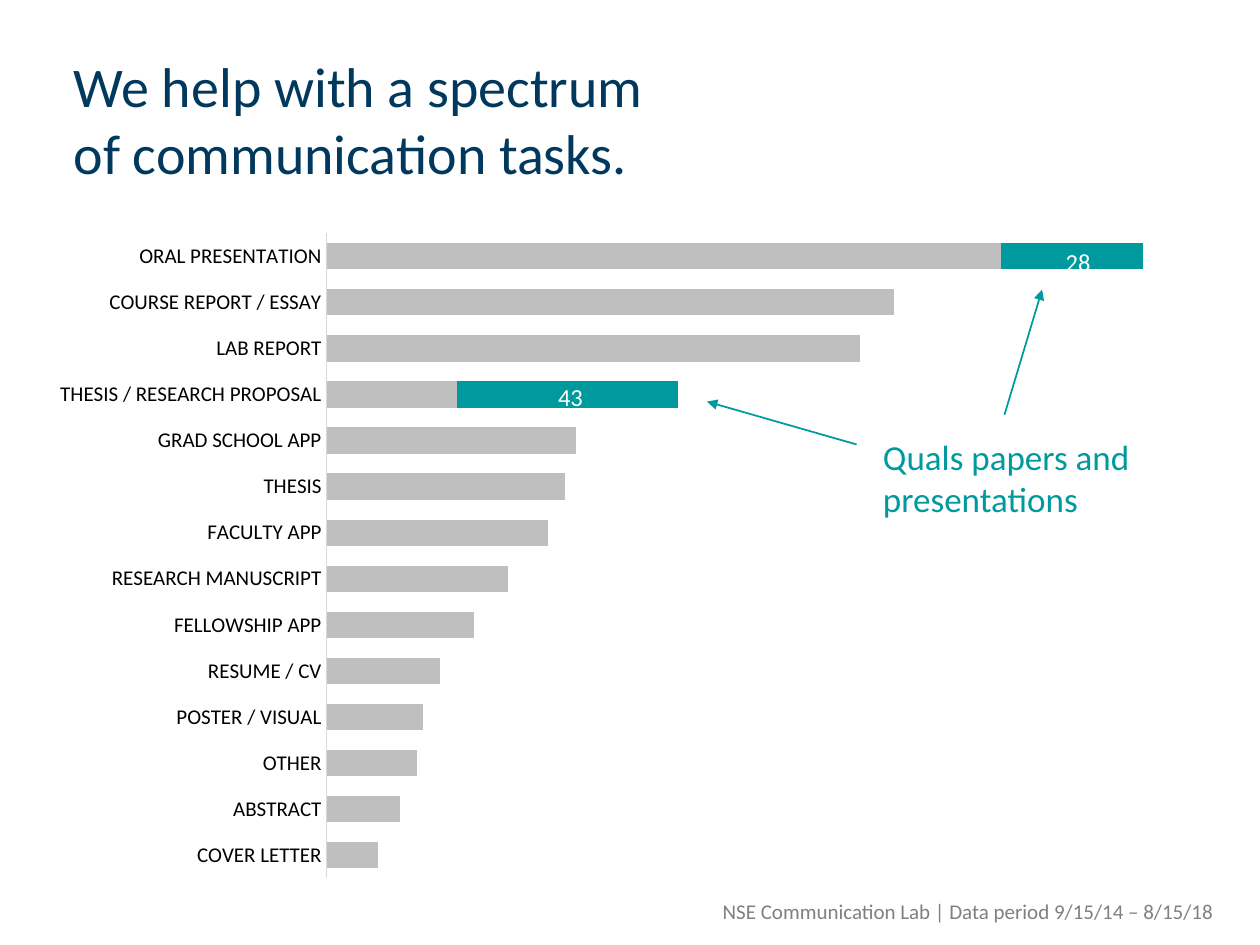
from dataclasses import dataclass

from lxml import etree
from pptx import Presentation
from pptx.chart import data as cd
from pptx.dml import color
from pptx.enum import chart as ce, shapes, text
from pptx.oxml import ns
from pptx.util import Pt


@dataclass(frozen=True)
class Theme:
    font: str = "Calibri"
    navy: str = "01395E"
    teal: str = "00999E"
    bar: str = "BFBFBF"
    axis: str = "D9D9D9"
    muted: str = "808080"
    black: str = "000000"
    white: str = "FFFFFF"
    title: int = 32
    callout: int = 20
    value: int = 14
    small: int = 12


T = Theme()
ALIGN = text.PP_ALIGN
TASKS = [
    ("COVER LETTER", 9, None, None),
    ("ABSTRACT", 13, None, None),
    ("OTHER", 16, None, None),
    ("POSTER / VISUAL", 17, None, None),
    ("RESUME / CV", 20, None, None),
    ("FELLOWSHIP APP", 26, None, None),
    ("RESEARCH MANUSCRIPT", 32, None, None),
    ("FACULTY APP", 39, None, None),
    ("THESIS", 42, None, None),
    ("GRAD SCHOOL APP", 44, None, None),
    ("THESIS / RESEARCH PROPOSAL", 23, 39, None),
    ("LAB REPORT", 94, None, None),
    ("COURSE REPORT / ESSAY", 100, None, None),
    ("ORAL PRESENTATION", 97, 22, 25),
]
QUALS_POINTS = {10: T.teal, 13: T.bar}
PLOT = {"x": 0.2555, "y": 0.019, "w": 0.724, "h": 0.96}


def rgb(value):
    return color.RGBColor.from_string(value)


def style(obj, **values):
    for name, value in values.items():
        setattr(obj, name, value)


def set_font(font, size, value):
    style(font, name=T.font, size=Pt(size))
    font.color.rgb = rgb(value)


def paint(part, value):
    part.format.fill.solid()
    part.format.fill.fore_color.rgb = rgb(value)


def add_text(slide, box, words, size, value, align=ALIGN.LEFT):
    tf = slide.shapes.add_textbox(*map(Pt, box)).text_frame
    style(tf, word_wrap=True, auto_size=text.MSO_AUTO_SIZE.SHAPE_TO_FIT_TEXT)
    p = tf.paragraphs[0]
    style(p, text=words, alignment=align)
    for r in p.runs:
        set_font(r.font, size, value)


def add_arrow(slide, start, end):
    line = slide.shapes.add_connector(
        shapes.MSO_CONNECTOR.STRAIGHT, *map(Pt, (*start, *end)))
    line.line.width = Pt(1)
    line.line.color.rgb = rgb(T.teal)
    etree.SubElement(line.line._get_or_add_ln(), ns.qn("a:tailEnd"), type="triangle")
    etree.SubElement(line._element.spPr, ns.qn("a:effectLst"))


def fix_plot_area(chart):
    area = chart._chartSpace.chart.plotArea
    for old in area.findall(ns.qn("c:layout")):
        area.remove(old)
    layout = etree.Element(ns.qn("c:layout"))
    manual = etree.SubElement(layout, ns.qn("c:manualLayout"))
    values = {"layoutTarget": "inner", "xMode": "edge", "yMode": "edge", **PLOT}
    for name, value in values.items():
        etree.SubElement(manual, ns.qn(f"c:{name}"), val=str(value))
    area.insert(0, layout)


def add_task_chart(slide, box):
    names, *columns = zip(*TASKS)
    data = cd.CategoryChartData()
    data.categories = names
    for i, values in enumerate(columns, 1):
        data.add_series(f"Series {i}", values)
    chart = slide.shapes.add_chart(
        ce.XL_CHART_TYPE.BAR_STACKED, *map(Pt, box), data).chart
    style(chart, has_legend=False, has_title=False)
    set_font(chart.font, T.small, T.black)
    fix_plot_area(chart)

    style(chart.value_axis, visible=False, has_major_gridlines=False,
          minimum_scale=0, maximum_scale=144)
    axis = chart.category_axis
    style(axis, major_tick_mark=ce.XL_TICK_MARK.NONE,
          minor_tick_mark=ce.XL_TICK_MARK.NONE, has_major_gridlines=False)
    axis.format.line.width = Pt(0.75)
    axis.format.line.color.rgb = rgb(T.axis)
    set_font(axis.tick_labels.font, T.small, T.black)

    plot = chart.plots[0]
    style(plot, gap_width=75, overlap=100, vary_by_categories=False)
    for series, value in zip(plot.series, (T.bar, T.axis, T.teal)):
        series.invert_if_negative = False
        paint(series, value)
    for i, value in QUALS_POINTS.items():
        paint(plot.series[1].points[i], value)


def add_quals_notes(slide, box):
    x, y = box[:2]
    add_text(slide, (x + 475.5, y + 119.5, 169, 55),
             "Quals papers and presentations", T.callout, T.teal)
    for (x1, y1), (x2, y2) in (((552, 111), (573.5, 39.5)),
                               ((467.5, 128), (382, 103.5))):
        add_arrow(slide, (x + x1, y + y1), (x + x2, y + y2))
    for words, dx, dy in (("43", 264.5, 88.5), ("28", 554.5, 11.5)):
        add_text(slide, (x + dx, y + dy, 79, 24.5),
                 words, T.value, T.white, ALIGN.CENTER)


def add_title(slide, box):
    add_text(slide, box, "We help with a spectrum\nof communication tasks.",
             T.title, T.navy)


def add_footer(slide, box):
    add_text(slide, box, "NSE Communication Lab | Data period 9/15/14 – 8/15/18",
             T.small, T.muted, ALIGN.RIGHT)


def main():
    prs = Presentation()
    style(prs, slide_width=Pt(720), slide_height=Pt(540))
    slide = prs.slides.add_slide(prs.slide_layouts[6])
    chart_box = (22, 126, 644.5, 384)
    add_task_chart(slide, chart_box)
    add_footer(slide, (348.5, 510, 352, 21.5))
    add_quals_notes(slide, chart_box)
    add_title(slide, (35, 26, 644.5, 85))
    prs.save("out.pptx")


if __name__ == "__main__":
    main()
